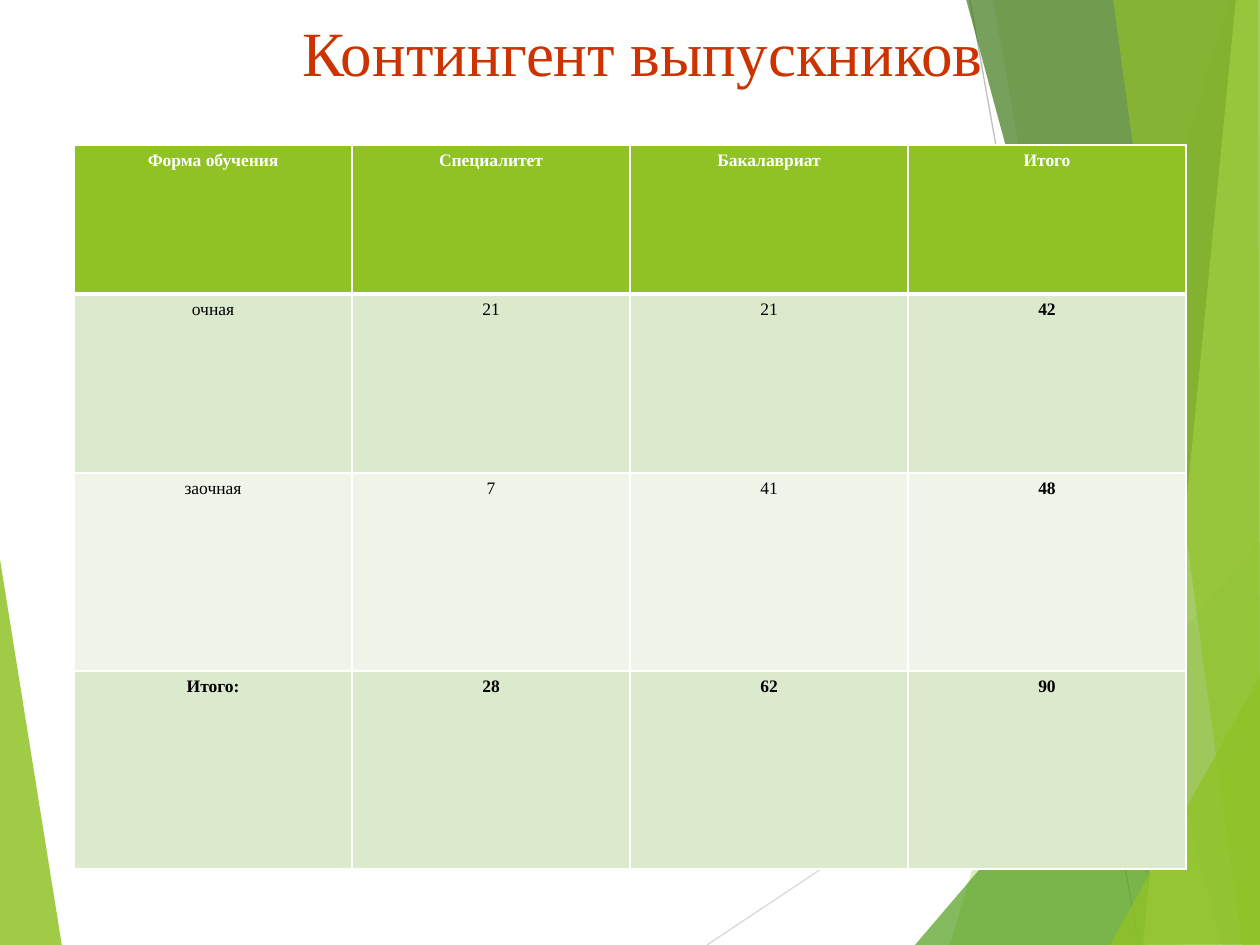
from lxml.etree import SubElement
from pptx import Presentation
from pptx.dml.color import RGBColor
from pptx.enum.text import MSO_ANCHOR, PP_ALIGN
from pptx.oxml import parse_xml
from pptx.oxml.ns import nsdecls, qn
from pptx.util import Pt

PX = 914400 / 126
FONT = "Times New Roman"


def px(value):
    return round(value * PX)


def color(code):
    return RGBColor.from_string(code)


deck = Presentation()
deck.slide_width = px(1260)
deck.slide_height = px(945)
page = deck.slides.add_slide(deck.slide_layouts[6])

facets = [
    ("90C226", 85, [(-1, 553), (62, 946), (-1, 945)]),
    ("90C226", 30, [(1229, 0), (950, 945), (1262, 946), (1261, 1)]),
    ("90C226", 20, [(993, -1), (1158, 945), (1261, 945), (1261, -1)]),
    ("54A021", 72, [(915, 945), (1260, 541), (1261, 945)]),
    ("3F7819", 70, [(966, -1), (1222, 945), (1261, 944), (1261, -1)]),
    ("C0E474", 70, [(1236, -1), (1143, 945), (1261, 945), (1260, -1)]),
    ("90C226", 65, [(1113, -1), (1242, 945), (1260, 945), (1258, -1)]),
    ("90C226", 80, [(1110, 945), (1261, 674), (1261, 944)]),
]
rays = [
    ("D9D9D9", 707, 945, 1261, 576),
    ("BFBFBF", 970, 0, 1139, 945),
]
for index, (code, opacity, points) in enumerate(facets):
    builder = page.shapes.build_freeform(*points[0], scale=PX)
    builder.add_line_segments(points[1:], close=True)
    facet = builder.convert_to_shape()
    facet.shadow.inherit = False
    facet.fill.solid()
    facet.fill.fore_color.rgb = color(code)
    facet.line.fill.background()
    tint = facet.fill._xPr.find(qn("a:solidFill"))[0]
    SubElement(tint, qn("a:alpha"), val=str(opacity * 1000))
    if index == 0:
        for ray_code, *ends in rays:
            ray = page.shapes.add_connector(1, *map(px, ends))
            ray.line.color.rgb = color(ray_code)
            ray.line.width = Pt(0.75)
            SubElement(ray._element.spPr, qn("a:effectLst"))

title = page.shapes.add_textbox(px(174), 0, px(937), px(275))
frame = title.text_frame
frame.word_wrap = True
frame.vertical_anchor = MSO_ANCHOR.TOP
frame.margin_top = px(14)
frame.text = "Контингент выпускников"
para = frame.paragraphs[0]
para.alignment = PP_ALIGN.CENTER
span = para.runs[0]
span.font.name = FONT
span.font.size = Pt(36)
span.font.color.rgb = color("CC3300")

rows = [
    ("Форма обучения", "Специалитет", "Бакалавриат", "Итого"),
    ("очная", "21", "21", "42"),
    ("заочная", "7", "41", "48"),
    ("Итого:", "28", "62", "90"),
]
heights = [149, 179, 198, 198]
fills = ["90C226", "DBE9CD", "EEF4E8", "DBE9CD"]
table = page.shapes.add_table(4, 4, px(74), px(145), px(1112), px(724)).table
for column in table.columns:
    column.width = px(278)
for r, values in enumerate(rows):
    table.rows[r].height = px(heights[r])
    for c, value in enumerate(values):
        cell = table.cell(r, c)
        cell.fill.solid()
        cell.fill.fore_color.rgb = color(fills[r])
        cell.text_frame.text = value
        para = cell.text_frame.paragraphs[0]
        para.alignment = PP_ALIGN.CENTER
        span = para.runs[0]
        span.font.name = FONT
        span.font.size = Pt(10)
        span.font.bold = r in (0, 3) or c == 3
        span.font.color.rgb = color("000000" if r else "FFFFFF")
        properties = cell._tc.get_or_add_tcPr()
        for place, side in enumerate(("lnL", "lnR", "lnT", "lnB")):
            thick = (r, side) in ((0, "lnB"), (1, "lnT"))
            width = Pt(3 if thick else 1)
            properties.insert(place, parse_xml(
                f'<a:{side} {nsdecls("a")} w="{width}"><a:solidFill>'
                f'<a:srgbClr val="FFFFFF"/></a:solidFill></a:{side}>'))

deck.save("out.pptx")
